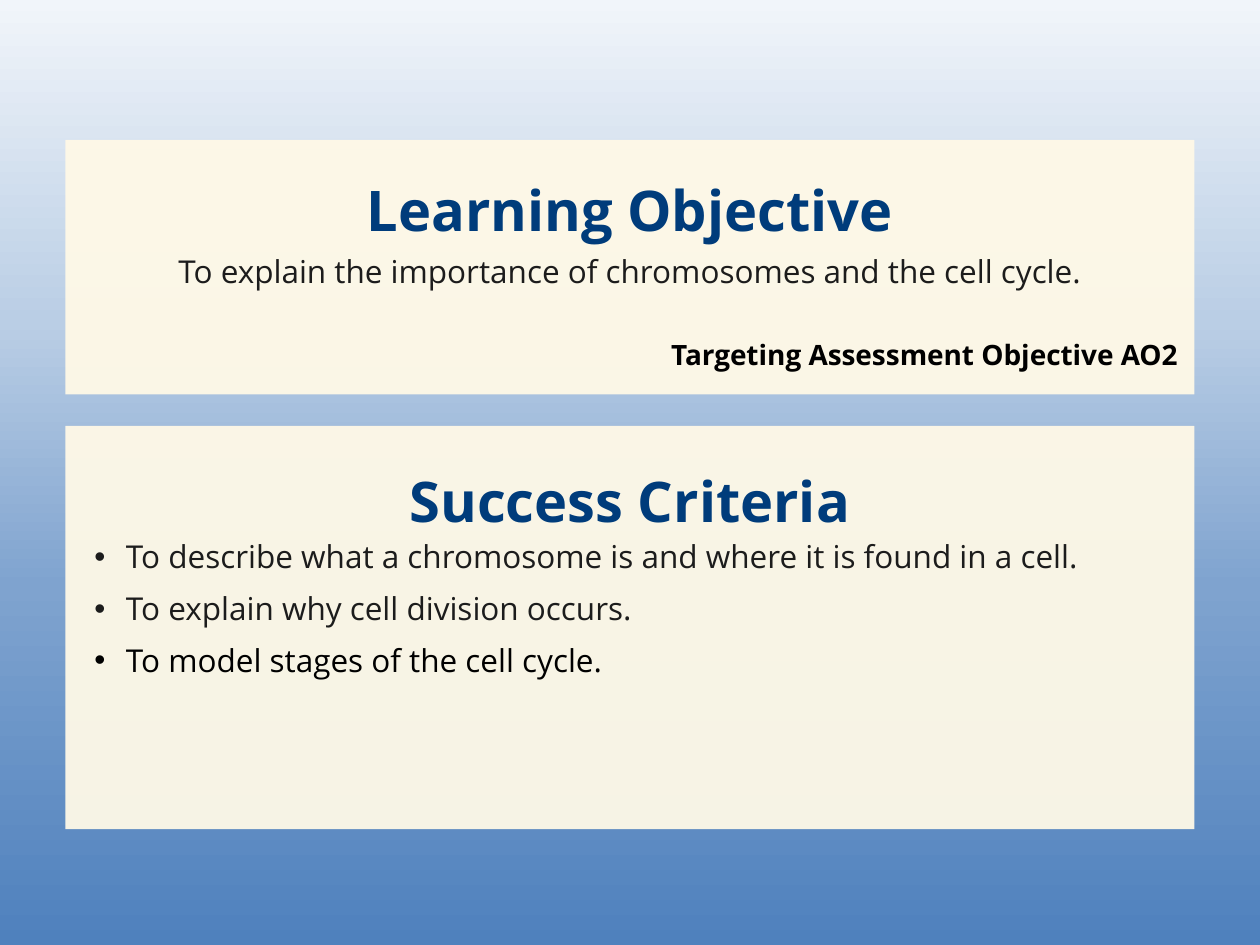
from lxml.etree import SubElement
from pptx import Presentation
from pptx.dml.color import RGBColor
from pptx.enum.shapes import MSO_SHAPE
from pptx.enum.text import MSO_ANCHOR, MSO_AUTO_SIZE, PP_ALIGN
from pptx.oxml.ns import qn
from pptx.util import Inches, Pt


def rgb(value):
    return RGBColor.from_string(value)


def add_text(p, text, size=18, color="1C1C1C", bold=False, align=PP_ALIGN.LEFT,
             spacing=0.9, before=0, bullet=None):
    p.alignment = align
    p.line_spacing = spacing
    p.space_before = Pt(before)
    if bullet:
        pPr = p._p.get_or_add_pPr()
        pPr.set("marL", str(Inches(0.25)))
        pPr.set("indent", str(Inches(-0.25)))
        SubElement(pPr, qn("a:buFont"), typeface="Arial")
        SubElement(pPr, qn("a:buChar"), char=bullet)
    r = p.add_run()
    r.text = text
    r.font.name = Deck.font
    r.font.size = Pt(size)
    r.font.bold = bold
    r.font.color.rgb = rgb(color)


class Deck:
    font = "Open Sans"
    heading = "003C7B"
    panel_fill = "FFF9E7"
    left, width = 0.52, 8.96

    def __init__(self, slide):
        self.s = slide

    def background(self, stops):
        fill = self.s.background.fill
        fill.gradient()
        fill.gradient_angle = 270
        gs_list = next(self.s.element.iter(qn("a:gsLst")))
        for gs in list(gs_list):
            gs_list.remove(gs)
        for position, color in stops:
            gs = SubElement(gs_list, qn("a:gs"), pos=str(position * 1000))
            SubElement(gs, qn("a:srgbClr"), val=color)

    def panel(self, top, height):
        sp = self.s.shapes.add_shape(
            MSO_SHAPE.ROUNDED_RECTANGLE, Inches(self.left), Inches(top),
            Inches(self.width), Inches(height))
        sp.adjustments[0] = 0
        sp.shadow.inherit = False
        sp.fill.solid()
        sp.fill.fore_color.rgb = rgb(self.panel_fill)
        sp.line.fill.background()
        color = sp.element.spPr.find(qn("a:solidFill"))[0]
        SubElement(color, qn("a:alpha"), val="95000")

    def text_box(self, left, top, width, height, lines, insets=(0, 0, 0, 0),
                 grow=True, gap=0, **style):
        sp = self.s.shapes.add_textbox(
            Inches(left), Inches(top), Inches(width), Inches(height))
        tf = sp.text_frame
        tf.word_wrap = True
        tf.vertical_anchor = MSO_ANCHOR.TOP
        tf.auto_size = MSO_AUTO_SIZE.SHAPE_TO_FIT_TEXT if grow else MSO_AUTO_SIZE.NONE
        (tf.margin_left, tf.margin_top,
         tf.margin_right, tf.margin_bottom) = map(Inches, insets)
        for i, (text, color) in enumerate(lines):
            p = tf.add_paragraph() if i else tf.paragraphs[0]
            add_text(p, text, color=color, before=gap if i else 0, **style)

    def title(self, top, text):
        self.text_box(self.left, top, self.width, 0.76, [(text, self.heading)],
                      insets=(0.28, 0.24, 0.28, 0.2), grow=False,
                      size=32, bold=True, align=PP_ALIGN.CENTER)


def main():
    prs = Presentation()
    prs.slide_width, prs.slide_height = Inches(10), Inches(7.5)
    deck = Deck(prs.slides.add_slide(prs.slide_layouts[6]))

    # Background and panels
    deck.background([(0, "F1F5FA"), (34, "BACEE5"), (62, "7FA3CF"), (100, "4F81BD")])
    deck.panel(1.11, 2.02)
    deck.panel(3.38, 3.2)

    # Headings
    deck.title(1.21, "Learning Objective")
    deck.title(3.52, "Success Criteria")

    # Success criteria
    deck.text_box(0.75, 4.3, 8.5, 1.1, [
        ("To describe what a chromosome is and where it is found in a cell.", "1C1C1C"),
        ("To explain why cell division occurs.", "1C1C1C"),
        ("To model stages of the cell cycle.", "000000"),
    ], gap=10, bullet="•")

    # Learning objective
    deck.text_box(1.05, 2.03, 7.9, 0.69, [
        ("To explain the importance of chromosomes and the cell cycle.", "1C1C1C"),
    ], align=PP_ALIGN.CENTER)
    deck.text_box(0.51, 2.68, 8.84, 0.27, [
        ("Targeting Assessment Objective AO2", "000000"),
    ], size=16, bold=True, align=PP_ALIGN.RIGHT, spacing=1.0)

    prs.save("out.pptx")


if __name__ == "__main__":
    main()
